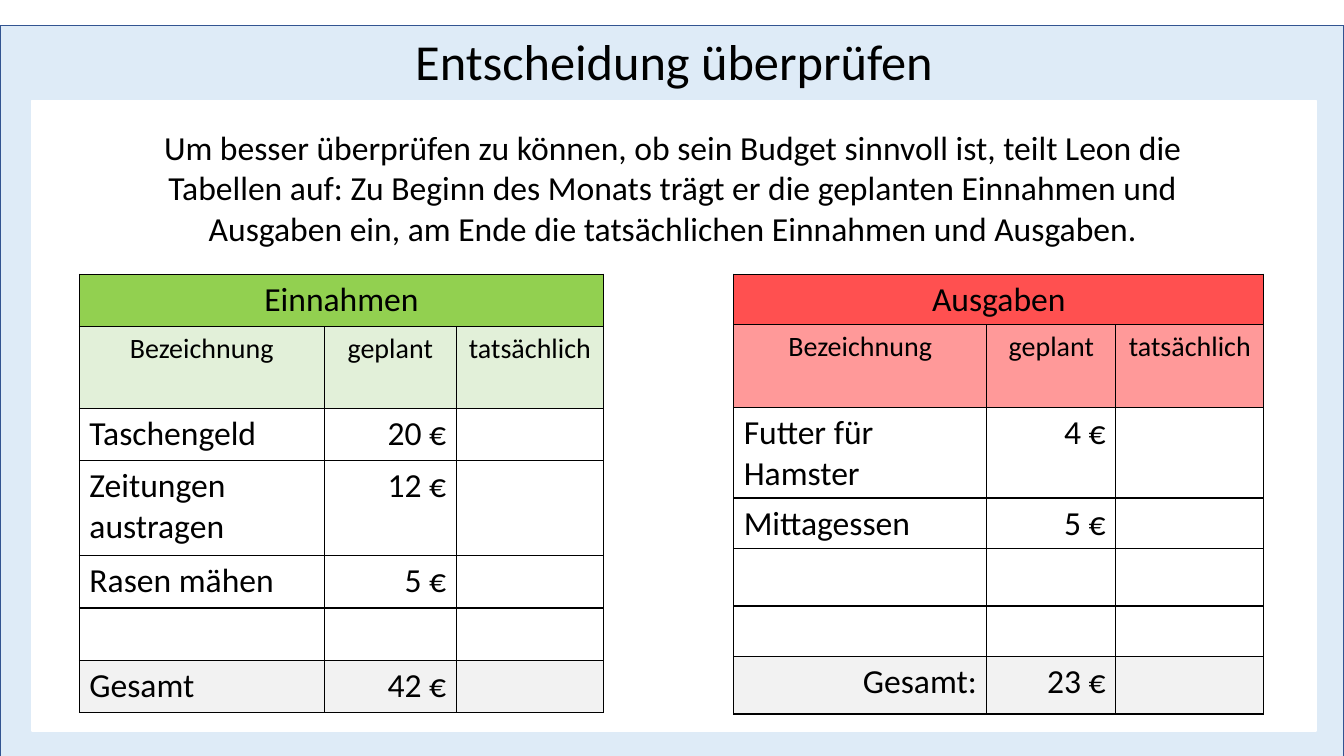
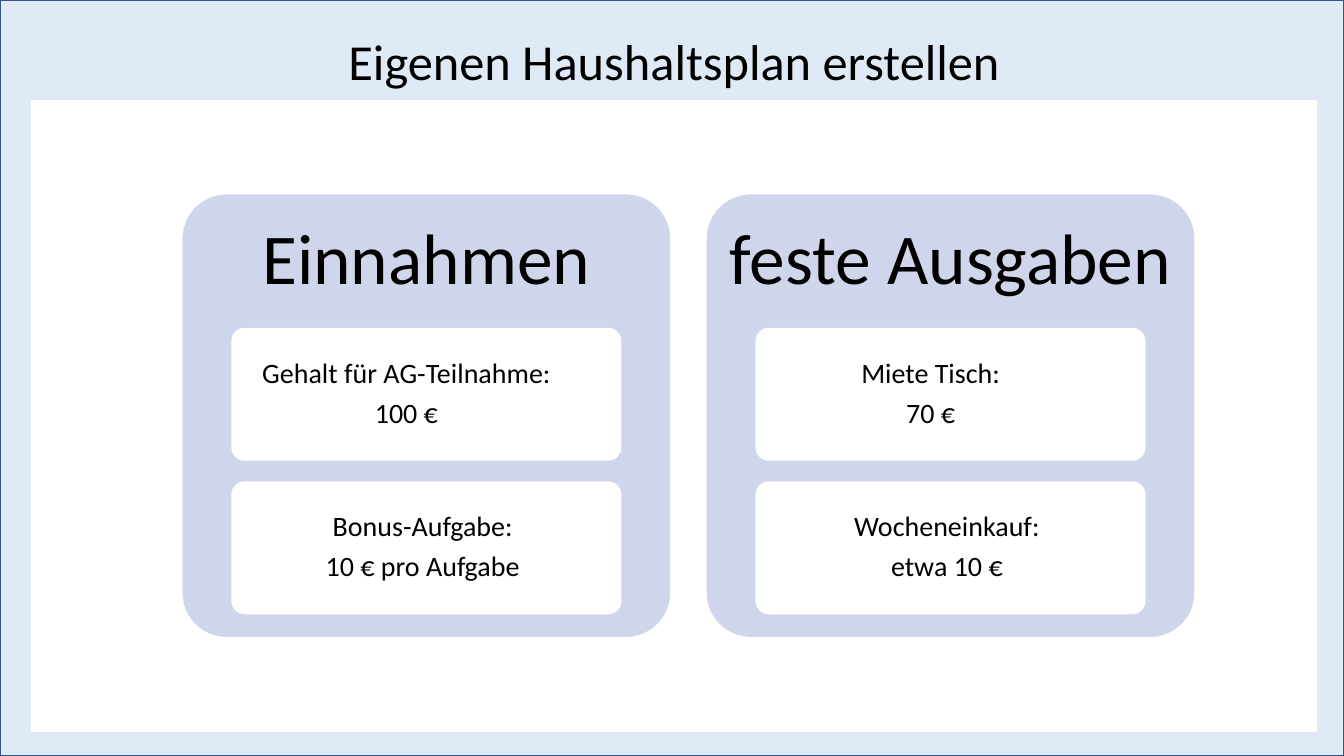
import pptx
import pptx.dml.color
import pptx.enum.shapes
import pptx.enum.text
import pptx.oxml
import pptx.oxml.ns
import pptx.util

Cm = pptx.util.Cm
Pt = pptx.util.Pt
RGBColor = pptx.dml.color.RGBColor
ALIGN = pptx.enum.text.PP_ALIGN
ANCHOR = pptx.enum.text.MSO_ANCHOR
SHAPE = pptx.enum.shapes.MSO_SHAPE

FONT = "Calibri"
BLACK = RGBColor(0x00, 0x00, 0x00)
WHITE = RGBColor(0xFF, 0xFF, 0xFF)
PALE_BLUE = RGBColor(0xDE, 0xEB, 0xF7)
FRAME_BLUE = RGBColor(0x32, 0x54, 0x91)
CARD_BLUE = RGBColor(0xCF, 0xD5, 0xEA)
GREEN = RGBColor(0x92, 0xD0, 0x50)
PALE_GREEN = RGBColor(0xE2, 0xF0, 0xD9)
RED = RGBColor(0xFF, 0x50, 0x50)
PALE_RED = RGBColor(0xFF, 0x99, 0x99)
TOTAL_GREY = RGBColor(0xF2, 0xF2, 0xF2)


def write(frame, text, size=24, align=ALIGN.CENTER, anchor=ANCHOR.TOP,
          inset=None, line_spacing=None, gap=0, first_right=0):
    """Fill a text frame, one paragraph per line; first_right indents the first."""
    frame.word_wrap = True
    frame.vertical_anchor = anchor
    if inset is not None:
        frame.margin_left = frame.margin_right = Cm(inset)
        frame.margin_top = frame.margin_bottom = Cm(inset)
    for index, line in enumerate(text.split("\n")):
        para = frame.paragraphs[0] if index == 0 else frame.add_paragraph()
        para.alignment = align
        if line_spacing:
            para.line_spacing = line_spacing
        if index:
            para.space_before = Pt(gap)
        elif first_right:
            para._p.get_or_add_pPr().set("marR", str(Cm(first_right)))
        span = para.add_run()
        span.text = line
        span.font.name = FONT
        span.font.size = Pt(size)
        span.font.color.rgb = BLACK


def add_box(page, kind, left, top, width, height, fill, line=None):
    box = page.shapes.add_shape(kind, Cm(left), Cm(top), Cm(width), Cm(height))
    box.shadow.inherit = False
    box.fill.solid()
    box.fill.fore_color.rgb = fill
    if line is None:
        box.line.fill.background()
    else:
        box.line.color.rgb = line
        box.line.width = Pt(1)
    if kind == SHAPE.ROUNDED_RECTANGLE:
        box.adjustments[0] = 0.1
    return box


deck = pptx.Presentation()
deck.slide_width = Cm(33.87)
deck.slide_height = Cm(19.05)

# Pages with the shared frame, panel and title
pages = []
for title, frame_top in (("Entscheidung überprüfen", 0.64),
                         ("Eigenen Haushaltsplan erstellen", 0)):
    page = deck.slides.add_slide(deck.slide_layouts[6])
    add_box(page, SHAPE.RECTANGLE, 0, frame_top, 33.87, 19.05, PALE_BLUE, FRAME_BLUE)
    add_box(page, SHAPE.RECTANGLE, 0.81, 2.54, 32.36, 15.88, WHITE, WHITE)
    box = page.shapes.add_textbox(Cm(0.81), Cm(0.64), Cm(32.36), Cm(1.8))
    write(box.text_frame, title, size=36)
    pages.append(page)
review_page, plan_page = pages

# Review page: planned and actual amounts
box = review_page.shapes.add_textbox(Cm(2.72), Cm(3.07), Cm(28.47), Cm(3.4))
write(box.text_frame,
      "Um besser überprüfen zu können, ob sein Budget sinnvoll ist, teilt Leon die "
      "Tabellen auf: Zu Beginn des Monats trägt er die geplanten Einnahmen und "
      "Ausgaben ein, am Ende die tatsächlichen Einnahmen und Ausgaben.")

COLUMN_HEADS = ("Bezeichnung", "geplant", "tatsächlich")
budgets = [
    dict(left=2, columns=(6.17, 3.33, 3.71),
         heights=(1.32, 2.06, 1.32, 2.39, 1.32, 1.32, 1.32),
         strong=GREEN, pale=PALE_GREEN, total_align=ALIGN.LEFT,
         rows=[("Einnahmen",), COLUMN_HEADS, ("Taschengeld", "20 €"),
               ("Zeitungen austragen", "12 €"), ("Rasen mähen", "5 €"),
               (), ("Gesamt", "42 €")]),
    dict(left=18.49, columns=(6.38, 3.25, 3.73),
         heights=(1.27, 2.08, 2.29, 1.27, 1.45, 1.27, 1.45),
         strong=RED, pale=PALE_RED, total_align=ALIGN.RIGHT,
         rows=[("Ausgaben",), COLUMN_HEADS, ("Futter für Hamster", "4 €"),
               ("Mittagessen", "5 €"), (), (), ("Gesamt:", "23 €")]),
]
for budget in budgets:
    rows, columns, heights = budget["rows"], budget["columns"], budget["heights"]
    last = len(rows) - 1
    table = review_page.shapes.add_table(
        len(rows), len(columns), Cm(budget["left"]), Cm(6.91),
        Cm(sum(columns)), Cm(sum(heights))).table
    table.first_row = table.horz_banding = False
    for column, width in zip(table.columns, columns):
        column.width = Cm(width)
    row_fills = {0: budget["strong"], 1: budget["pale"], last: TOTAL_GREY}
    for r, texts in enumerate(rows):
        table.rows[r].height = Cm(heights[r])
        for c in range(len(columns)):
            cell = table.cell(r, c)
            for side in ("lnL", "lnR", "lnT", "lnB"):
                cell._tc.get_or_add_tcPr().append(pptx.oxml.parse_xml(
                    f'<a:{side} {pptx.oxml.ns.nsdecls("a")} w="12700"><a:solidFill>'
                    f'<a:srgbClr val="{BLACK}"/></a:solidFill></a:{side}>'))
            if r in row_fills:
                cell.fill.solid()
                cell.fill.fore_color.rgb = row_fills[r]
            else:
                cell.fill.background()
            if c < len(texts):
                if r < 2:
                    align = ALIGN.CENTER
                elif c:
                    align = ALIGN.RIGHT
                else:
                    align = budget["total_align"] if r == last else ALIGN.LEFT
                write(cell.text_frame, texts[c], size=20 if r == 1 else 24, align=align)
    table.cell(0, 0).merge(table.cell(0, len(columns) - 1))

# Plan page: two cards with two entries each
cards = [
    ("Einnahmen", [("Gehalt für AG-Teilnahme:\n100 €", 1),
                   ("Bonus-Aufgabe:\n10 € pro Aufgabe", 0.18)]),
    ("feste Ausgaben", [("Miete Tisch:\n70 €", 1),
                        ("Wocheneinkauf:\netwa 10 €", 0.18)]),
]
for index, (heading, entries) in enumerate(cards):
    left = 4.6 + index * 13.21
    add_box(plan_page, SHAPE.ROUNDED_RECTANGLE, left, 4.9, 12.29, 11.15, CARD_BLUE)
    box = plan_page.shapes.add_textbox(Cm(left), Cm(4.9), Cm(12.29), Cm(3.35))
    write(box.text_frame, heading, size=51, anchor=ANCHOR.MIDDLE, inset=0.5,
          line_spacing=0.9)
    for number, (text, first_right) in enumerate(entries):
        entry = add_box(plan_page, SHAPE.ROUNDED_RECTANGLE, left + 1.23,
                        8.26 + number * 3.87, 9.83, 3.35, WHITE)
        write(entry.text_frame, text, size=20, anchor=ANCHOR.MIDDLE, inset=0.15,
              line_spacing=0.9, gap=7, first_right=first_right)

deck.save("out.pptx")
